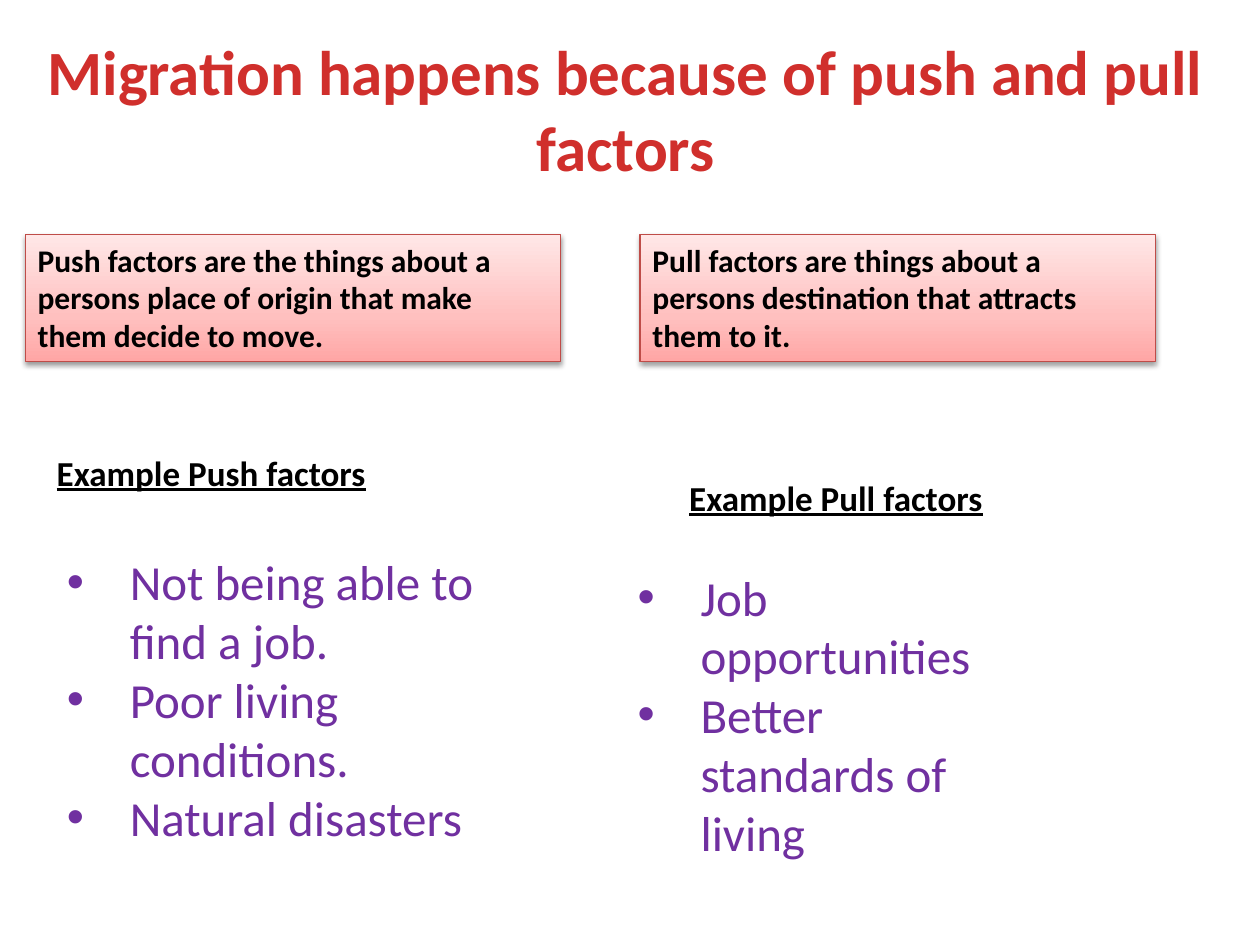
import pptx
import pptx.util
import pptx.dml.color
import pptx.enum.shapes
import pptx.enum.text
import pptx.oxml
import pptx.oxml.ns

Pt = pptx.util.Pt
FONT = "Calibri"
COLORS = {
    "title": "D02F2C", "text": "000000", "list": "7030A0", "border": "BF4C48",
    "dark": "FFA6A5", "mid": "FFC0BF", "light": "FFE7E7",
}
GRADIENT = [(0, "dark"), (35, "mid"), (100, "light")]

TITLE = ("Migration happens because of push and pull factors", (8.64, 15.12, 697.68, 94.32))
COLUMNS = [
    {
        "definition": ("Push factors are the things about a persons place of origin "
                       "that make them decide to move.", (14.4, 133.92, 306, 72.72)),
        "heading": ("Example Push factors", (25.2, 254.16, 209.52, 31.68)),
        "factors": (["Not being able to find a job.", "Poor living conditions.",
                     "Natural disasters"], (30.96, 311.76, 272.16, 210.96)),
    },
    {
        "definition": ("Pull factors are things about a persons destination "
                       "that attracts them to it.", (365.76, 133.92, 294.48, 72.72)),
        "heading": ("Example Pull factors", (386.64, 268.56, 209.52, 31.68)),
        "factors": (["Job opportunities", "Better standards of living"],
                    (357.12, 320.4, 206.64, 177.12)),
    },
]


def rgb(name):
    return pptx.dml.color.RGBColor.from_string(COLORS[name])


def place(shape, box):
    shape.left, shape.top, shape.width, shape.height = map(Pt, box)


def write(shape, lines, size, color, align="LEFT", bold=False, underline=False, indent=0):
    tf = shape.text_frame
    tf.word_wrap = True
    tf.auto_size = pptx.enum.text.MSO_AUTO_SIZE.NONE
    tf.vertical_anchor = pptx.enum.text.MSO_ANCHOR.TOP
    for i, line in enumerate(lines):
        p = tf.add_paragraph() if i else tf.paragraphs[0]
        p.alignment = pptx.enum.text.PP_ALIGN[align]
        p.space_before = Pt(0)
        if indent:
            pPr = p._p.get_or_add_pPr()
            pPr.set("marL", str(Pt(indent)))
            pPr.set("indent", str(-Pt(indent)))
        r = p.add_run()
        r.text = line
        r.font.name = FONT
        r.font.size = Pt(size)
        r.font.bold = bold
        r.font.underline = underline
        r.font.color.rgb = rgb(color)


def add_definition(s, text, box):
    sp = s.shapes.add_shape(pptx.enum.shapes.MSO_SHAPE.RECTANGLE, *map(Pt, box))
    sp.line.color.rgb = rgb("border")
    sp.line.width = Pt(0.75)
    ns = pptx.oxml.ns.nsdecls("a")
    stops = "".join(f'<a:gs pos="{pos * 1000}"><a:srgbClr val="{COLORS[c]}"/></a:gs>'
                    for pos, c in GRADIENT)
    fill = pptx.oxml.parse_xml(
        f'<a:gradFill {ns} rotWithShape="1"><a:gsLst>{stops}</a:gsLst>'
        '<a:lin ang="16200000" scaled="0"/></a:gradFill>')
    shadow = pptx.oxml.parse_xml(
        f'<a:effectLst {ns}><a:outerShdw blurRad="{Pt(3.1)}" dist="{Pt(1.6)}" '
        'dir="5400000" rotWithShape="0"><a:srgbClr val="000000">'
        '<a:alpha val="38000"/></a:srgbClr></a:outerShdw></a:effectLst>')
    spPr = sp._element.spPr
    spPr.find(pptx.oxml.ns.qn("a:prstGeom")).addnext(fill)
    spPr.append(shadow)
    write(sp, [text], 18, "text", bold=True)


def main():
    prs = pptx.Presentation()
    prs.slide_width, prs.slide_height = Pt(720), Pt(540)
    s = prs.slides.add_slide(prs.slide_layouts.get_by_name("Comparison"))
    title, *bodies = s.placeholders

    text, box = TITLE
    place(title, box)
    write(title, [text], 36, "title", align="CENTER", bold=True)

    for column, heading, factors in zip(COLUMNS, bodies[::2], bodies[1::2]):
        add_definition(s, *column["definition"])
        text, box = column["heading"]
        place(heading, box)
        write(heading, [text], 20, "text", bold=True, underline=True)
        lines, box = column["factors"]
        place(factors, box)
        write(factors, lines, 28, "list", indent=36)

    prs.save("out.pptx")


if __name__ == "__main__":
    main()
